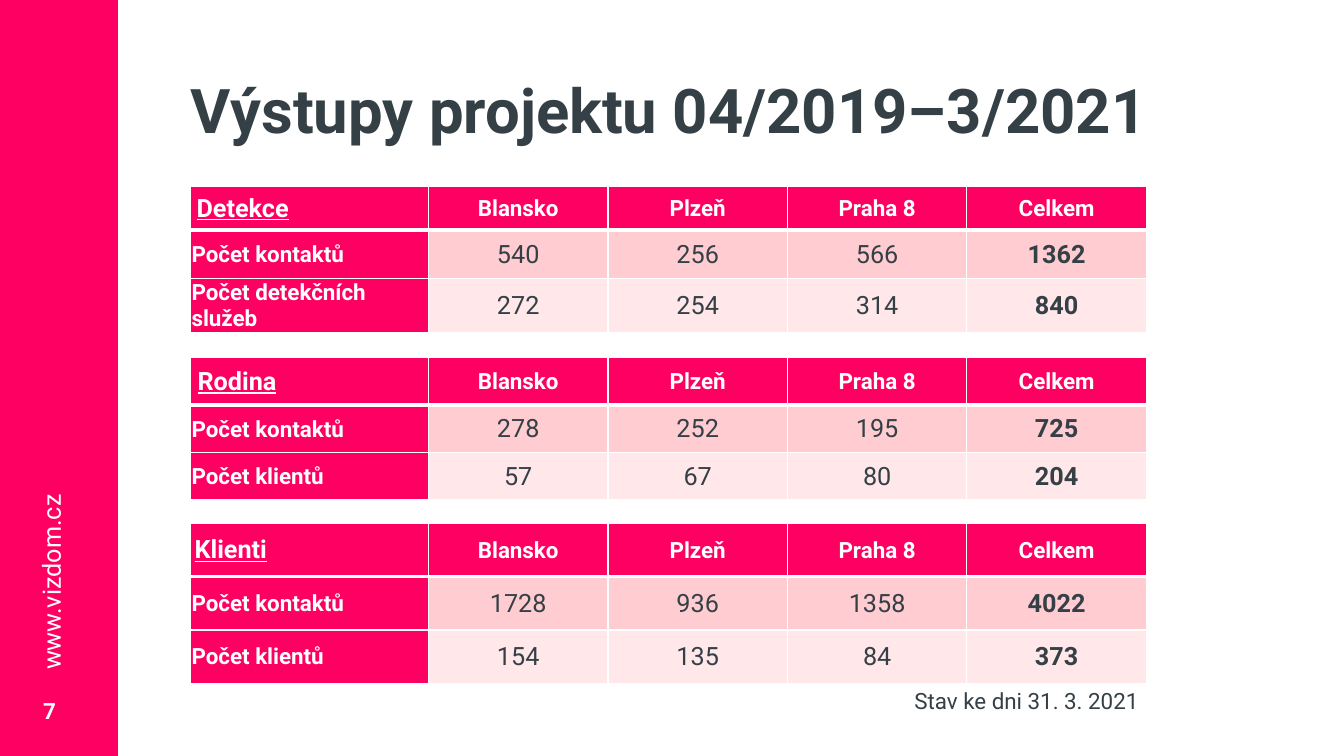
"""Build the slide with the project outputs by city."""
from lxml import etree
from pptx import Presentation
from pptx import util as u
from pptx.dml.color import RGBColor
from pptx.enum import shapes, text as t
from pptx.oxml import ns

PINK = RGBColor(0xFE, 0x00, 0x61)
ROSE = RGBColor(0xFF, 0xCC, 0xD2)
BLUSH = RGBColor(0xFF, 0xE7, 0xEA)
SLATE = RGBColor(0x34, 0x40, 0x46)
WHITE = RGBColor(0xFF, 0xFF, 0xFF)

LEFT, CENTER, RIGHT = t.PP_ALIGN.LEFT, t.PP_ALIGN.CENTER, t.PP_ALIGN.RIGHT
CITIES = ["Blansko", "Plzeň", "Praha 8", "Celkem"]
TABLES = [
    ("Detekce", 1.85, [0.43, 0.48, 0.48], 0.06, [
        ("Počet kontaktů", 540, 256, 566, 1362),
        ("Počet detekčních služeb", 272, 254, 314, 840)]),
    ("Rodina", 3.55, [0.47] * 3, 0.07, [
        ("Počet kontaktů", 278, 252, 195, 725),
        ("Počet klientů", 57, 67, 80, 204)]),
    ("Klienti", 5.19, [0.53] * 3, 0.04, [
        ("Počet kontaktů", 1728, 936, 1358, 4022),
        ("Počet klientů", 154, 135, 84, 373)]),
]


def write(frame, text, size=16, color=SLATE, bold=False, underline=False,
          align=LEFT, font="Roboto", spacing=None):
    """Put one formatted paragraph into a text frame."""
    para = frame.paragraphs[0]
    para.alignment = align
    para.line_spacing = spacing
    span = para.add_run()
    span.text = text
    span.font.name = font
    span.font.size = u.Pt(size)
    span.font.bold = bold
    span.font.underline = underline
    span.font.color.rgb = color


def set_margins(item, left, top, right, bottom):
    """Set the four inner margins of a cell or text frame."""
    item.margin_left, item.margin_top = u.Inches(left), u.Inches(top)
    item.margin_right, item.margin_bottom = u.Inches(right), u.Inches(bottom)


def set_borders(cell, **widths):
    """Draw white cell borders, one point wide unless a side is given."""
    props = cell._tc.get_or_add_tcPr()
    for index, side in enumerate("LRTB"):
        line = etree.Element(ns.qn(f"a:ln{side}"), w=str(u.Pt(widths.get(side, 1))))
        fill = etree.SubElement(line, ns.qn("a:solidFill"))
        etree.SubElement(fill, ns.qn("a:srgbClr"), val=str(WHITE))
        props.insert(index, line)


class Painter:
    """Hold the slide and draw its elements."""

    def __init__(self, slide):
        self.slide = slide

    def title(self, text, *area):
        """Move, fill and write the title placeholder."""
        box = self.slide.shapes.title
        box.left, box.top, box.width, box.height = map(u.Inches, area)
        box.fill.solid()
        box.fill.fore_color.rgb = WHITE
        frame = box.text_frame
        frame.word_wrap = True
        frame.auto_size = t.MSO_AUTO_SIZE.NONE
        frame.vertical_anchor = t.MSO_ANCHOR.MIDDLE
        set_margins(frame, 0, 0.05, 0, 0.05)
        write(frame, text, size=44, bold=True, spacing=0.9)

    def paint(self, shape, color, opacity=100):
        """Fill a shape and take away its line and shadow."""
        shape.shadow.inherit = False
        shape.line.fill.background()
        shape.fill.solid()
        shape.fill.fore_color.rgb = color
        if opacity < 100:
            tone = shape._element.spPr.find(".//" + ns.qn("a:srgbClr"))
            etree.SubElement(tone, ns.qn("a:alpha"), val=str(opacity * 1000))

    def band(self, *area):
        """Draw a pink rectangle."""
        self.paint(self.slide.shapes.add_shape(
            shapes.MSO_SHAPE.RECTANGLE, *map(u.Inches, area)), PINK)

    def chevron(self, points):
        """Draw a pale outline shape through the given points."""
        start, *others = points
        builder = self.slide.shapes.build_freeform(*start, scale=u.Inches(1))
        builder.add_line_segments(others, close=True)
        self.paint(builder.convert_to_shape(), SLATE, opacity=20)

    def label(self, text, *area, rotation=0, anchor=t.MSO_ANCHOR.TOP, **format):
        """Add a wrapping text box."""
        box = self.slide.shapes.add_textbox(*map(u.Inches, area))
        box.rotation = rotation
        box.text_frame.word_wrap = True
        box.text_frame.vertical_anchor = anchor
        write(box.text_frame, text, **format)

    def cell(self, cell, value, row, column, indent):
        """Fill, border and write one table cell."""
        head, side = row == 0, column == 0
        cell.fill.solid()
        cell.fill.fore_color.rgb = PINK if head or side else (ROSE, BLUSH)[row - 1]
        set_borders(cell, T=3 if row == 1 else 1, B=3 if head else 1)
        cell.vertical_anchor = t.MSO_ANCHOR.MIDDLE
        corner = head and side
        set_margins(cell, indent if corner else 0.01, 0.01, 0.01, 0)
        write(cell.text_frame, str(value),
              size=18 if head == side else 16,
              color=WHITE if head or side else SLATE,
              bold=head or side or column == len(CITIES),
              underline=corner, align=LEFT if side else CENTER)

    def table(self, name, top, heights, indent, records):
        """Add one table with a city header and label column."""
        rows = [(name, *CITIES), *records]
        widths = [2.36] + [1.78] * len(CITIES)
        grid = self.slide.shapes.add_table(
            len(rows), len(widths), u.Inches(1.89), u.Inches(top),
            u.Inches(sum(widths)), u.Inches(sum(heights))).table
        grid.horz_banding = False
        for column, width in zip(grid.columns, widths):
            column.width = u.Inches(width)
        for row, (values, height) in enumerate(zip(rows, heights)):
            grid.rows[row].height = u.Inches(height)
            for column, value in enumerate(values):
                self.cell(grid.cell(row, column), value, row, column, indent)


def main():
    """Build and save the deck."""
    deck = Presentation()
    deck.slide_width, deck.slide_height = u.Inches(13.33), u.Inches(7.5)
    page = Painter(deck.slides.add_slide(deck.slide_layouts[5]))
    page.chevron([(12.81, 6.94), (12.91, 7.04), (12.9, 7.05),
                  (12.81, 6.97), (12.72, 7.05), (12.7, 7.04)])
    page.band(0, 0, 1.17, 7.5)
    page.label("7", 0.33, 6.75, 0.5, 0.6, anchor=t.MSO_ANCHOR.MIDDLE,
               color=WHITE, bold=True)
    page.label("www.vizdom.cz", -0.68, 5.35, 2.38, 0.41, rotation=270,
               size=18, color=WHITE)
    page.title("Výstupy projektu 04/2019–3/2021", 1.89, 0.4, 10.53, 1.45)
    for entry in TABLES:
        page.table(*entry)
    page.label("Stav ke dni 31. 3. 2021", 6.67, 6.77, 4.72, 0.37, align=RIGHT)
    deck.save("out.pptx")


if __name__ == "__main__":
    main()
